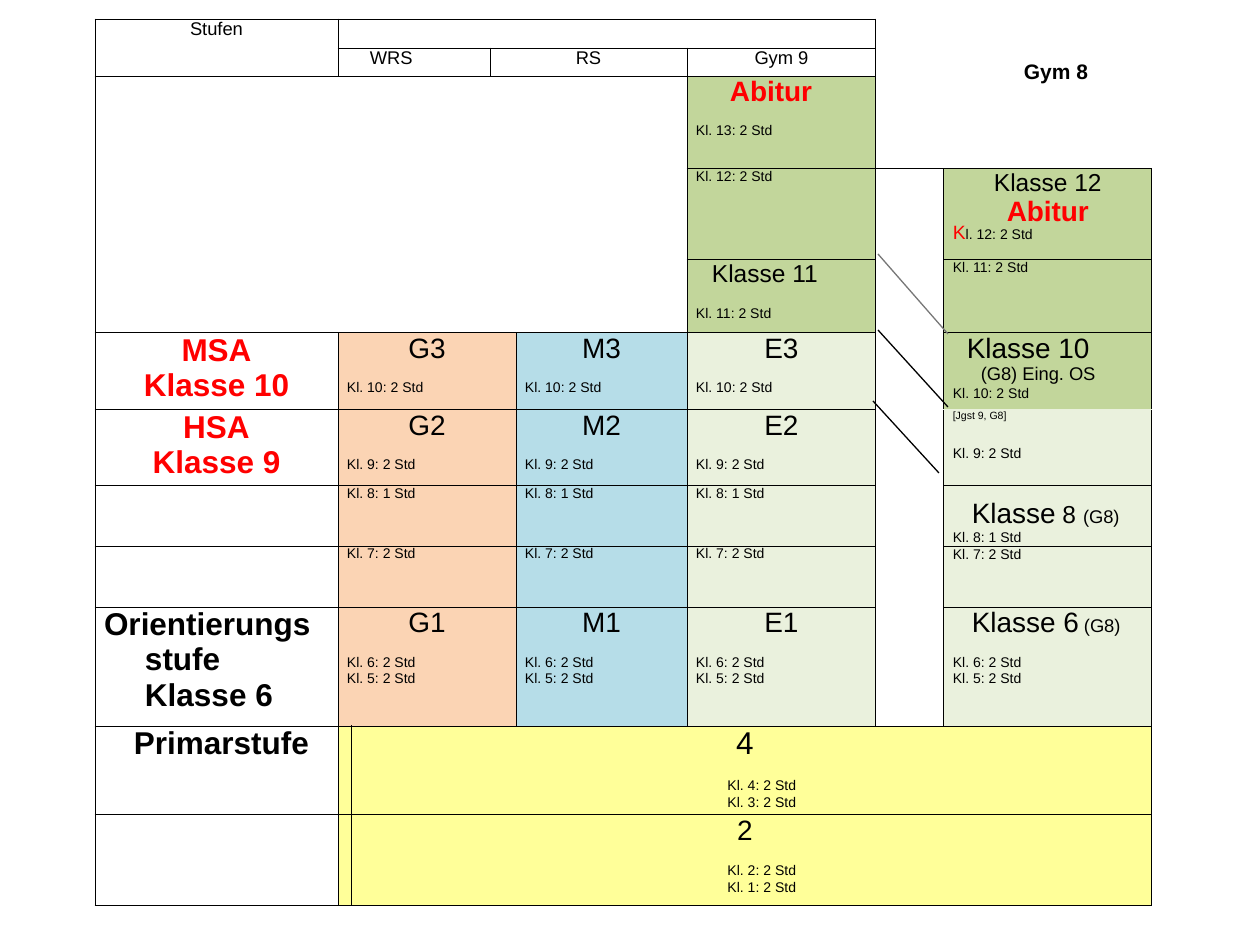
from dataclasses import dataclass
from lxml import etree
from pptx import Presentation, util as u
from pptx.dml.color import RGBColor
from pptx.enum import shapes, text
from pptx.oxml.ns import qn

PX = 914400 // 126  # EMU in one px
COLS = [243, 13, 139, 26, 171, 189, 68, 195, 13]
ROWS = [29, 28, 93, 91, 73, 77, 76, 60, 61, 119, 89, 91]
MID = text.PP_ALIGN.CENTER


@dataclass(frozen=True)
class Theme:
    font: str = "Arial"
    black: str = "000000"
    red: str = "FF0000"
    gray: str = "777777"
    olive: str = "C2D69B"
    green: str = "EAF1DD"
    peach: str = "FBD4B4"
    blue: str = "B6DDE8"
    yellow: str = "FFFF99"
    edge: float = 0.58
    tiny: float = 6
    small: float = 8
    label: float = 10.5
    head: float = 14
    big: float = 16
    stage: float = 18


T = Theme()


def write(box, words, size=T.small, color=T.black, bold=False, align=None,
          left=0, right=0, hang=0, before=0, line=None, par=None):
    """Add a paragraph to a cell, or a further run to the paragraph par."""
    if par is None:
        frame = box.text_frame
        par = frame.add_paragraph() if frame.text else frame.paragraphs[0]
        par.alignment = align
        par.space_before = u.Pt(before)
        if line:
            par.line_spacing = u.Pt(line)
        props = par._p.get_or_add_pPr()
        for name, gap in [("marL", left), ("marR", right), ("indent", hang)]:
            props.set(name, str(gap * PX))
    run = par.add_run()
    run.text = words
    font = run.font
    font.name, font.size, font.bold = T.font, u.Pt(size), bold
    font.color.rgb = RGBColor.from_string(color)
    return par


def hours(box, grade, count=2, **form):
    form.setdefault("left", 9)
    write(box, f"Kl. {grade}: {count} Std", **form)


def border(cell, sides, colors):
    props = cell._tc.get_or_add_tcPr()
    for spot, side in enumerate("LRTB"):
        line = etree.Element(qn(f"a:ln{side}"), w=str(int(T.edge * 12700)))
        if side in sides:
            fill = etree.SubElement(line, qn("a:solidFill"))
            etree.SubElement(fill, qn("a:srgbClr"), val=colors.get(side, T.black))
        else:
            etree.SubElement(line, qn("a:noFill"))
        props.insert(spot, line)


def block(table, row, col, rows=1, cols=1, fill=None, sides="LRTB", top=0, **colors):
    """Merge, fill and frame one block of cells; return its first cell."""
    first = table.cell(row, col)
    if rows * cols > 1:
        first.merge(table.cell(row + rows - 1, col + cols - 1))
    for r in range(row, row + rows):
        for c in range(col, col + cols):
            cell = table.cell(r, c)
            cell.fill.background()
            outer = {"L": c == col, "R": c == col + cols - 1,
                     "T": r == row, "B": r == row + rows - 1}
            # The first cell of a merged block carries all its sides
            border(cell, [s for s in sides if outer[s] or cell.is_merge_origin],
                   colors)
    if fill:
        first.fill.solid()
        first.fill.fore_color.rgb = RGBColor.from_string(fill)
    first.margin_top = top * PX
    return first


def header(table, row):
    write(block(table, row, 0, rows=2), "Stufen", size=T.label, align=MID)
    block(table, row, 1, cols=5)
    write(block(table, row + 1, 1, cols=2), "WRS", size=T.label, left=32)
    write(block(table, row + 1, 3, cols=2), "RS", size=T.label, align=MID)
    write(block(table, row + 1, 5), "Gym 9", size=T.label, align=MID)
    box = block(table, row, 6, rows=3, cols=3, sides="LB", top=41)
    write(box, "Gym 8", size=12, bold=True, left=148)


def upper(table, row):
    """Upper years of the nine-year school."""
    block(table, row, 0, rows=3, cols=5)
    box = block(table, row, 5, fill=T.olive)
    write(box, "Abitur", size=T.big, color=T.red, bold=True, left=43)
    hours(box, 13, before=9.1)
    hours(block(table, row + 1, 5, fill=T.olive), 12)
    box = block(table, row + 2, 5, fill=T.olive)
    write(box, "Klasse 11", size=T.head, left=25)
    hours(box, 11, before=10.3)


def stages(table, row):
    """Stage names on the left of the middle years."""
    for step, (exam, grade) in enumerate([("MSA", 10), ("HSA", 9)]):
        box = block(table, row + step, 0)
        for words in (exam, f"Klasse {grade}"):
            write(box, words, size=T.stage, color=T.red, bold=True, align=MID)
    for step in (2, 3):
        block(table, row + step, 0)
    write(block(table, row + 4, 0), "Orientierungs stufe Klasse 6",
          size=T.stage, bold=True, left=50, right=20, hang=-41)


def tracks(table, row):
    """Three parallel courses, from class 10 down to class 5."""
    for mark, col, cols, fill in [("G", 1, 3, T.peach), ("M", 4, 1, T.blue),
                                  ("E", 5, 1, T.green)]:
        for step, level in enumerate([3, 2, None, None, 1]):
            box = block(table, row + step, col, cols=cols, fill=fill)
            if level:
                write(box, f"{mark}{level}", size=T.big, align=MID)
            last = level == 1
            hours(box, 10 - step, count=1 if step == 2 else 2,
                  before=9.1 if level else 0, line=9.3 if last else None)
            if last:
                hours(box, 5, line=9.3)


def short(table, row):
    """Eight-year school and the gap beside it."""
    block(table, row, 6, rows=7)

    def part(step, fill, **form):
        return block(table, row + step, 7, cols=2, fill=fill, **form)

    box = part(0, T.olive)
    par = write(box, "Klasse 12", size=T.head, align=MID)
    par.add_line_break()
    write(box, "Abitur", size=T.big, color=T.red, bold=True, par=par)
    par = write(box, "K", size=11, color=T.red, left=9, line=9.4)
    write(box, "l. 12: 2 Std", par=par)
    hours(part(1, T.olive), 11)

    box = part(2, T.olive, B=T.green)
    par = write(box, "Klasse 10 ", size=T.big, left=37, right=30, hang=-14)
    write(box, "(G8) Eing. OS", size=T.label, par=par)
    hours(box, 10, line=9.6)

    box = part(3, T.green, T=T.green)
    write(box, "[Jgst 9, G8]", size=T.tiny, left=9)
    hours(box, 9, before=13.7)

    box = part(4, T.green, top=22)
    par = write(box, "Klasse", size=T.big, left=28, line=12.4)
    write(box, " 8 ", size=T.head, par=par)
    write(box, "(G8)", size=T.label, par=par)
    hours(box, 8, count=1, line=9.4)
    hours(part(5, T.green), 7, line=9.4)

    box = part(6, T.green)
    par = write(box, "Klasse 6", size=T.big, left=28)
    write(box, " (G8)", size=T.label, par=par)
    hours(box, 6, before=9.1, line=9.3)
    hours(box, 5, line=9.3)


def primary(table, row):
    write(block(table, row, 0), "Primarstufe", size=T.stage, bold=True, left=39)
    block(table, row + 1, 0)
    for step, (grade, size) in enumerate([(4, T.stage), (2, T.big)]):
        block(table, row + step, 1, fill=T.yellow)
        box = block(table, row + step, 2, cols=6, fill=T.yellow, sides="LTB")
        write(box, str(grade), size=size, align=MID)
        hours(box, grade, align=MID, left=34, before=9.1, line=9.5)
        hours(box, grade - 1, align=MID, left=34, line=9.5)
        block(table, row + step, 8, fill=T.yellow, sides="RTB")


def grid(slide, x, y):
    frame = slide.shapes.add_table(len(ROWS), len(COLS), x * PX, y * PX,
                                   sum(COLS) * PX, sum(ROWS) * PX)
    table = frame.table
    table.first_row = table.horz_banding = False
    for col, width in zip(table.columns, COLS):
        col.width = width * PX
    for row, height in zip(table.rows, ROWS):
        row.height = height * PX
    # Plain cells: no insets, and small type where they stay empty
    for cell in table.iter_cells():
        cell.margin_left = cell.margin_right = 0
        cell.margin_top = cell.margin_bottom = 0
        mark = cell.text_frame.paragraphs[0]._p
        etree.SubElement(mark, qn("a:endParaRPr"), sz=str(T.small * 100))
    header(table, 0)
    upper(table, 2)
    stages(table, 5)
    tracks(table, 5)
    short(table, 3)
    primary(table, 10)


def links(slide, x, y):
    """Slanted lines from the nine-year to the eight-year school."""
    for x1, y1, x2, y2, color in [(5, 76, 75, 153, T.black),
                                  (5, 0, 75, 80, T.gray),
                                  (0, 147, 66, 219, T.black)]:
        line = slide.shapes.add_connector(
            shapes.MSO_CONNECTOR.STRAIGHT, (x + x1) * PX, (y + y1) * PX,
            (x + x2) * PX, (y + y2) * PX)
        line.line.color.rgb = RGBColor.from_string(color)
        line.line.width = u.Pt(0.75)
        etree.SubElement(line._element.spPr, qn("a:effectLst"))


def main():
    deck = Presentation()
    deck.slide_width, deck.slide_height = u.Inches(10), u.Inches(7.5)
    slide = deck.slides.add_slide(deck.slide_layouts[6])
    grid(slide, 95, 19)
    links(slide, 873, 254)
    deck.save("out.pptx")


if __name__ == "__main__":
    main()
